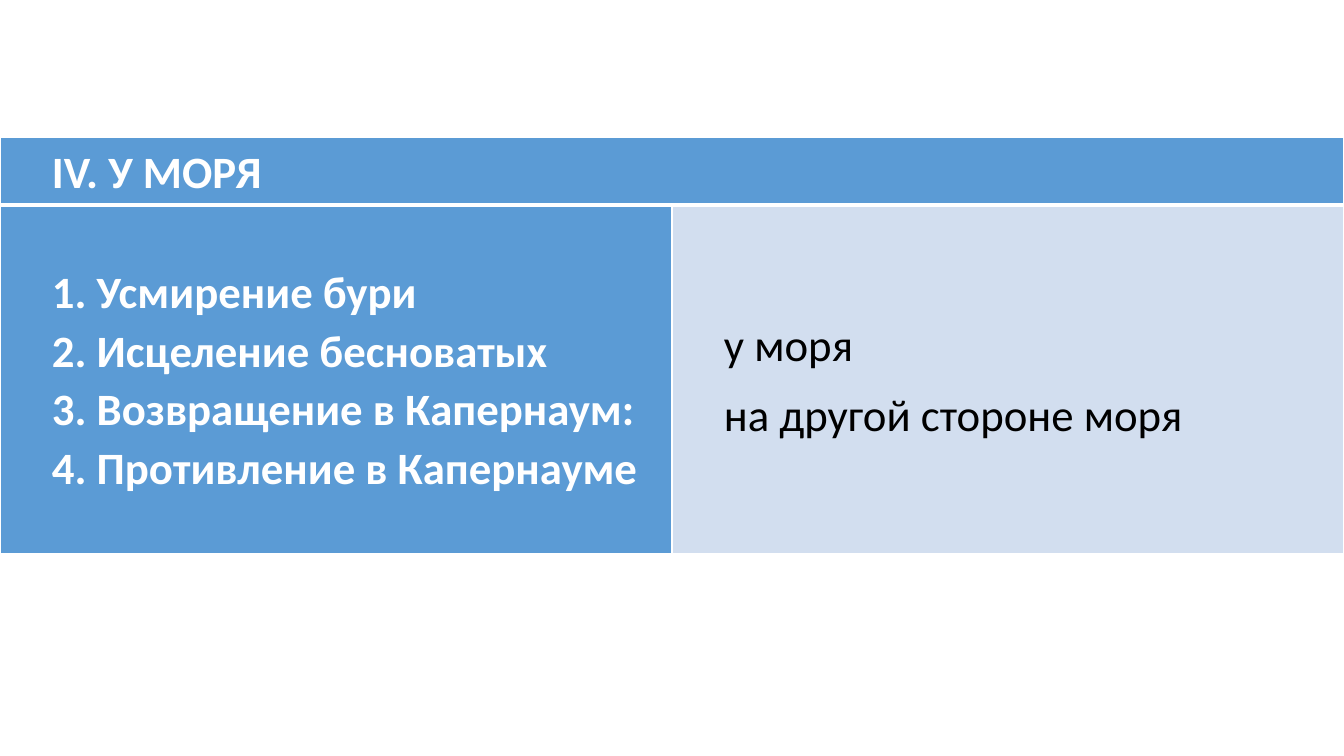
import pptx
import pptx.dml.color
import pptx.enum.text
import pptx.oxml.ns
import pptx.util
from lxml import etree

WHITE = pptx.dml.color.RGBColor(0xFF, 0xFF, 0xFF)
BLACK = pptx.dml.color.RGBColor(0, 0, 0)
BLUE = pptx.dml.color.RGBColor(0x5B, 0x9B, 0xD5)
PALE_BLUE = pptx.dml.color.RGBColor(0xD2, 0xDE, 0xEF)

# Content
HEADING = ["IV. У МОРЯ"]
EVENTS = ["\n".join([
    "1. Усмирение бури",
    "2. Исцеление бесноватых",
    "3. Возвращение в Капернаум:",
    "4. Противление в Капернауме",
])]
PLACES = ["у моря", "на другой стороне моря"]

# row, column, paragraphs, fill, text colour, bold, space after (pt)
CELLS = [
    (0, 0, HEADING, BLUE, WHITE, True, 0),
    (1, 0, EVENTS, BLUE, WHITE, True, 8),
    (1, 1, PLACES, PALE_BLUE, BLACK, False, 8),
]

# Layout in px
SLIDE_W, SLIDE_H = 1344, 756
TABLE_TOP = 137
ROW_HEIGHTS = [68, 349]
COLUMNS = 2
MARGIN, INDENT = 2, 50
FONT, FONT_SIZE, LINE_SPACING = "Calibri", 32, 1.07


def px(n):
    return pptx.util.Emu(round(n * 914400 / 100.8))


def set_border(cell, side, width):
    tc_pr = cell._tc.get_or_add_tcPr()
    ln = etree.SubElement(tc_pr, pptx.oxml.ns.qn("a:ln" + side),
                          w=str(pptx.util.Pt(width)))
    fill = etree.SubElement(ln, pptx.oxml.ns.qn("a:solidFill"))
    etree.SubElement(fill, pptx.oxml.ns.qn("a:srgbClr"), val=str(WHITE))


def write_cell(cell, lines, fill, color, bold, space_after):
    cell.fill.solid()
    cell.fill.fore_color.rgb = fill
    cell.vertical_anchor = pptx.enum.text.MSO_ANCHOR.MIDDLE
    cell.margin_left = cell.margin_right = px(MARGIN)
    cell.margin_top = cell.margin_bottom = px(MARGIN)
    tf = cell.text_frame
    for i, line in enumerate(lines):
        p = tf.paragraphs[0] if i == 0 else tf.add_paragraph()
        p.text = line
        p.level = 1
        p.line_spacing = LINE_SPACING
        p.space_after = pptx.util.Pt(space_after)
        p_pr = p._p.get_or_add_pPr()
        p_pr.set("marL", str(px(INDENT)))
        p_pr.set("indent", "0")
        for r in p.runs:
            r.font.name = FONT
            r.font.size = pptx.util.Pt(FONT_SIZE)
            r.font.bold = bold
            r.font.color.rgb = color


def main():
    prs = pptx.Presentation()
    prs.slide_width, prs.slide_height = px(SLIDE_W), px(SLIDE_H)
    s = prs.slides.add_slide(prs.slide_layouts[6])

    # Table grid
    table = s.shapes.add_table(len(ROW_HEIGHTS), COLUMNS, 0, px(TABLE_TOP),
                               px(SLIDE_W), px(sum(ROW_HEIGHTS))).table
    for column in table.columns:
        column.width = px(SLIDE_W / COLUMNS)
    for row, height in zip(table.rows, ROW_HEIGHTS):
        row.height = px(height)
    table.cell(0, 0).merge(table.cell(0, COLUMNS - 1))

    # White borders, thicker under the heading row
    for i, row in enumerate(table.rows):
        for cell in row.cells:
            for side in "LRTB":
                heading_rule = (i, side) in [(0, "B"), (1, "T")]
                set_border(cell, side, 3 if heading_rule else 1)

    # Text and fills
    for row, column, *content in CELLS:
        write_cell(table.cell(row, column), *content)

    prs.save("out.pptx")


if __name__ == "__main__":
    main()
